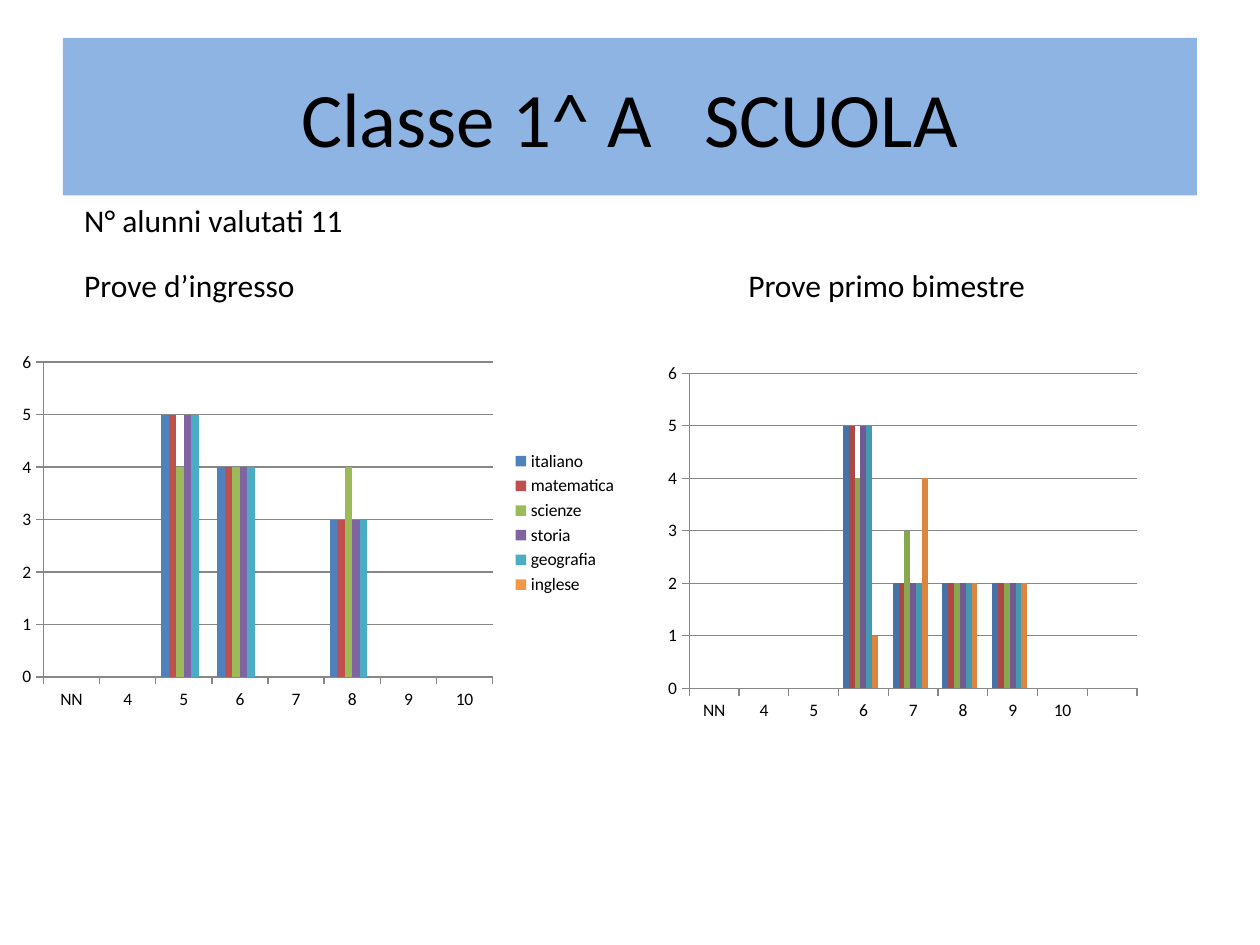
from dataclasses import dataclass
from typing import Optional

from lxml.etree import SubElement
from pptx import Presentation
from pptx.chart.data import CategoryChartData
from pptx.dml.color import RGBColor
from pptx.enum.chart import XL_CHART_TYPE as ChartType
from pptx.enum.chart import XL_LEGEND_POSITION as LegendPosition
from pptx.enum.chart import XL_TICK_MARK as TickMark
from pptx.enum.shapes import MSO_SHAPE as ShapeKind
from pptx.enum.text import MSO_ANCHOR as Anchor
from pptx.enum.text import MSO_AUTO_SIZE as AutoSize
from pptx.enum.text import PP_ALIGN as Align
from pptx.oxml.ns import qn
from pptx.util import Inches, Pt

WIDTH, HEIGHT = 10, 7.5
FONT = "Calibri"
COLORS = {"banner": "8EB4E3", "text": "000000", "axis": "878787"}
GRADES = ["NN", "4", "5", "6", "7", "8", "9", "10"]


@dataclass
class Label:
    text: str
    left: float
    top: float
    width: float


@dataclass
class GradeChart:
    left: float
    top: float
    plot: tuple[float, float, float, float]  # x, y, w, h as shares of the chart
    categories: list[str]
    series: dict[str, dict[str, int]]  # subject -> grade -> number of pupils
    legend: bool


COMMON_ENTRY = {"5": 5, "6": 4, "8": 3}
COMMON_TERM = {"6": 5, "7": 2, "8": 2, "9": 2}

LABELS = [
    Label("Prove d’ingresso", 0.57, 2.06, 1.89),
    Label("Prove primo bimestre", 5.84, 2.06, 2.42),
    Label("N° alunni valutati 11", 0.57, 1.55, 2.28),
]

CHARTS = [
    GradeChart(
        0, 2.65, (0.069, 0.075, 0.713, 0.833), GRADES,
        {
            "italiano": COMMON_ENTRY,
            "matematica": COMMON_ENTRY,
            "scienze": {"5": 4, "6": 4, "8": 4},
            "storia": COMMON_ENTRY,
            "geografia": COMMON_ENTRY,
            "inglese ": {},
        },
        legend=True,
    ),
    GradeChart(
        WIDTH / 2, 2.88, (0.094, 0.028, 0.711, 0.833), GRADES + [""],
        {
            "Series 1": COMMON_TERM,
            "Series 2": COMMON_TERM,
            "Series 3": COMMON_TERM | {"6": 4, "7": 3},
            "Series 4": COMMON_TERM,
            "Series 5": COMMON_TERM,
            "Series 6": COMMON_TERM | {"6": 1, "7": 4},
            "Series 7": {},
        },
        legend=False,
    ),
]


def color(name: str) -> RGBColor:
    return RGBColor.from_string(COLORS[name])


def style_font(font, size: float) -> None:
    font.name = FONT
    font.size = Pt(size)
    font.color.rgb = color("text")


def set_text(shape, text: str, size: float, align: Optional[Align] = None) -> None:
    shape.text_frame.text = text
    paragraph = shape.text_frame.paragraphs[0]
    paragraph.alignment = align
    style_font(paragraph.runs[0].font, size)


def add_banner(slide, text: str) -> None:
    margin = WIDTH * 0.05
    shape = slide.shapes.add_shape(
        ShapeKind.RECTANGLE, Inches(margin), Inches(HEIGHT * 0.04),
        Inches(WIDTH - 2 * margin), Inches(HEIGHT / 6))
    shape.shadow.inherit = False
    shape.fill.solid()
    shape.fill.fore_color.rgb = color("banner")
    shape.line.fill.background()
    shape.text_frame.vertical_anchor = Anchor.MIDDLE
    set_text(shape, text, 44, Align.CENTER)


def add_label(slide, label: Label) -> None:
    box = slide.shapes.add_textbox(
        Inches(label.left), Inches(label.top), Inches(label.width), Inches(0.4))
    box.text_frame.word_wrap = False
    box.text_frame.auto_size = AutoSize.SHAPE_TO_FIT_TEXT
    set_text(box, label.text, 18)


def place_plot(chart, shares: tuple[float, float, float, float]) -> None:
    plot_area = chart.plots[0]._element.getparent()
    layout = plot_area.find(qn("c:layout"))
    if layout is None:
        layout = SubElement(plot_area, qn("c:layout"))
        plot_area.insert(0, layout)
    manual = SubElement(layout, qn("c:manualLayout"))
    settings = [("layoutTarget", "inner"), ("xMode", "edge"), ("yMode", "edge")]
    settings += zip("xywh", shares)
    for name, value in settings:
        SubElement(manual, qn(f"c:{name}")).set("val", str(value))


def add_grade_chart(slide, item: GradeChart) -> None:
    data = CategoryChartData()
    data.categories = item.categories
    for subject, counts in item.series.items():
        data.add_series(subject, [counts.get(grade) for grade in item.categories])
    chart = slide.shapes.add_chart(
        ChartType.COLUMN_CLUSTERED, Inches(item.left), Inches(item.top),
        Inches(WIDTH / 2), Inches(HEIGHT * 0.4), data).chart
    style_font(chart.font, 10)
    chart.has_title = False

    # Columns keep the theme's accent colours
    plot = chart.plots[0]
    plot.vary_by_categories = False
    plot.gap_width = 150
    place_plot(chart, item.plot)

    # Axes and gridlines
    value_axis = chart.value_axis
    value_axis.minimum_scale, value_axis.maximum_scale = 0, 6
    value_axis.major_unit = 1
    value_axis.has_major_gridlines = True
    value_axis.major_gridlines.format.line.color.rgb = color("axis")
    for axis in (chart.category_axis, value_axis):
        axis.major_tick_mark = TickMark.OUTSIDE
        axis.format.line.color.rgb = color("axis")

    chart.has_legend = item.legend
    if item.legend:
        chart.legend.position = LegendPosition.RIGHT
        chart.legend.include_in_layout = False


def main() -> None:
    presentation = Presentation()
    presentation.slide_width = Inches(WIDTH)
    presentation.slide_height = Inches(HEIGHT)
    slide = presentation.slides.add_slide(presentation.slide_layouts[6])
    add_banner(slide, "Classe 1^ A   SCUOLA")
    for item in CHARTS:
        add_grade_chart(slide, item)
    for label in LABELS:
        add_label(slide, label)
    presentation.save("out.pptx")


if __name__ == "__main__":
    main()
